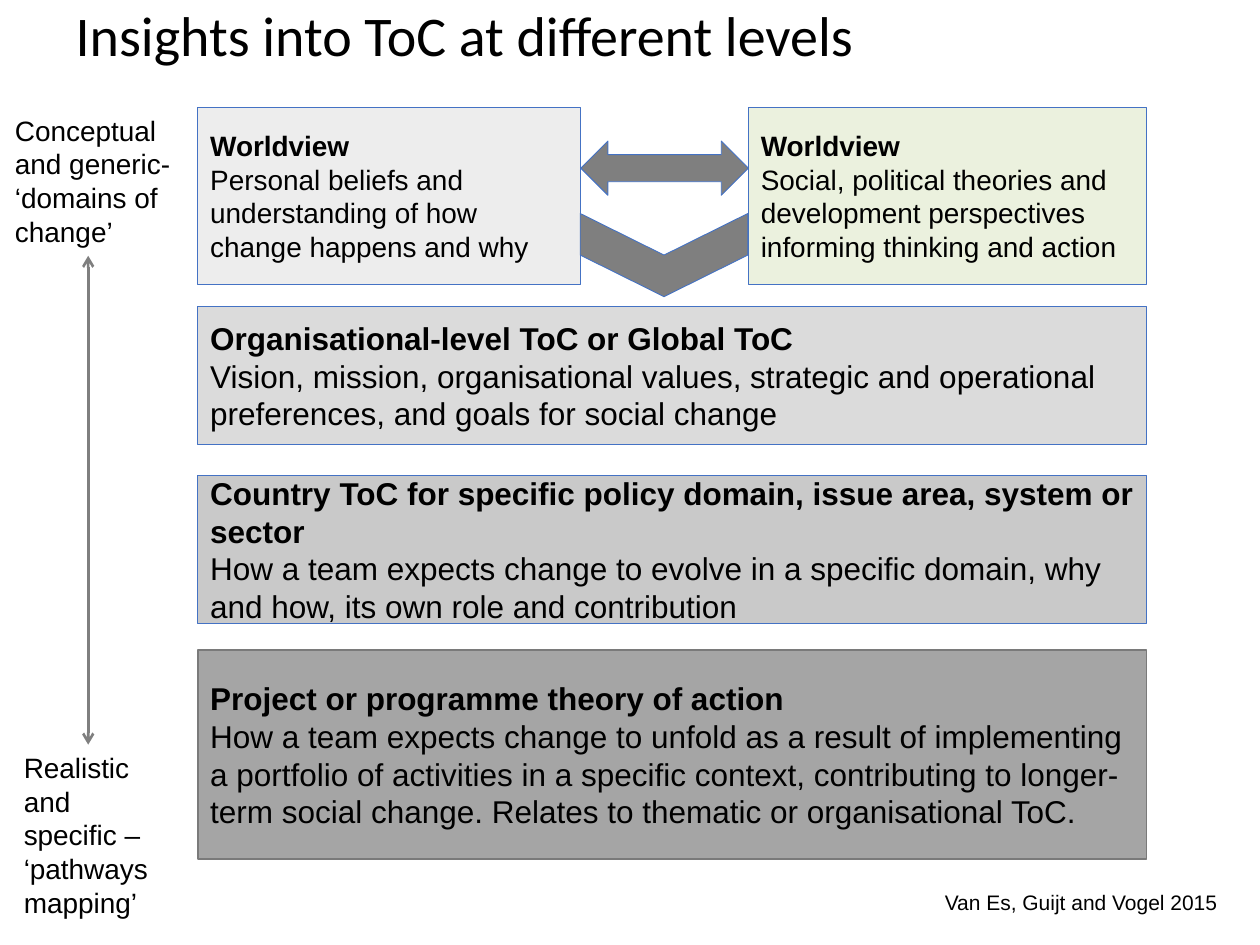
from dataclasses import dataclass

from lxml import etree
from pptx import Presentation
from pptx.dml.color import RGBColor
from pptx.enum.shapes import MSO_CONNECTOR, MSO_SHAPE
from pptx.enum.text import MSO_ANCHOR, MSO_AUTO_SIZE, PP_ALIGN
from pptx.oxml.ns import qn
from pptx.util import Inches, Pt

RECT = MSO_SHAPE.RECTANGLE
DOUBLE_ARROW = MSO_SHAPE.LEFT_RIGHT_ARROW
CHEVRON = MSO_SHAPE.CHEVRON
STRAIGHT = MSO_CONNECTOR.STRAIGHT
MIDDLE = MSO_ANCHOR.MIDDLE
LEFT = PP_ALIGN.LEFT
FIT_SHAPE = MSO_AUTO_SIZE.SHAPE_TO_FIT_TEXT
NO_FIT = MSO_AUTO_SIZE.NONE

COLORS = {
    "text": "000000",
    "border": "4472C4",
    "dark_border": "7A7A7A",
    "arrow": "7F7F7F",
    "personal": "EDEDED",
    "social": "EBF1DE",
    "organisation": "DBDBDB",
    "country": "C9C9C9",
    "project": "A5A5A5",
}
COLUMN_X, COLUMN_W = 1.57, 7.53
WORLD_Y, WORLD_H = 0.85, 1.41
GAP_X, GAP_W = 4.61, 1.33  # space between the two worldviews


@dataclass
class Level:
    heading: str
    body: str
    x: float
    y: float
    w: float
    h: float
    fill: str
    size: int = 18
    border: str = "border"
    border_width: float = 0.5


LEVELS = [
    Level("Project or programme theory of action",
          "How a team expects change to unfold as a result of implementing a "
          "portfolio of activities in a specific context, contributing to "
          "longer-term social change. Relates to thematic or organisational ToC.",
          COLUMN_X, 5.16, COLUMN_W, 1.66, "project",
          border="dark_border", border_width=1),
    Level("Country ToC for specific policy domain, issue area, system or sector",
          "How a team expects change to evolve in a specific domain, why and "
          "how, its own role and contribution",
          COLUMN_X, 3.77, COLUMN_W, 1.18, "country"),
    Level("Organisational-level ToC or Global ToC",
          "Vision, mission, organisational values, strategic and operational "
          "preferences, and goals for social change",
          COLUMN_X, 2.43, COLUMN_W, 1.1, "organisation"),
    Level("Worldview",
          "Personal beliefs and understanding of how change happens and why",
          COLUMN_X, WORLD_Y, GAP_X - COLUMN_X, WORLD_H, "personal", size=16),
    Level("Worldview",
          "Social, political theories and development perspectives informing "
          "thinking and action",
          GAP_X + GAP_W, WORLD_Y, COLUMN_X + COLUMN_W - GAP_X - GAP_W, WORLD_H,
          "social", size=16),
]


def rgb(name: str) -> RGBColor:
    return RGBColor.from_string(COLORS[name])


def write(tf, *lines: str, size: float, font: str = "Arial",
          bold_first: bool = False, spacing: float = 1.0) -> None:
    """Put each line in its own left-aligned paragraph."""
    tf.word_wrap = True
    for i, line in enumerate(lines):
        p = tf.paragraphs[0] if i == 0 else tf.add_paragraph()
        p.alignment = LEFT
        p.line_spacing = spacing
        r = p.add_run()
        r.text = line
        r.font.name = font
        r.font.size = Pt(size)
        r.font.bold = bold_first and i == 0
        r.font.color.rgb = rgb("text")


def add_block(s, kind, x: float, y: float, w: float, h: float, fill: str,
              border: str = "border", border_width: float = 0.5):
    sp = s.shapes.add_shape(kind, Inches(x), Inches(y), Inches(w), Inches(h))
    sp.shadow.inherit = False
    sp.fill.solid()
    sp.fill.fore_color.rgb = rgb(fill)
    sp.line.color.rgb = rgb(border)
    sp.line.width = Pt(border_width)
    return sp


def add_level(s, level: Level) -> None:
    sp = add_block(s, RECT, level.x, level.y, level.w, level.h, level.fill,
                   level.border, level.border_width)
    sp.text_frame.vertical_anchor = MIDDLE
    write(sp.text_frame, level.heading, level.body, size=level.size,
          bold_first=True)


def add_label(s, x: float, y: float, w: float, h: float, *lines: str,
              size: float = 16):
    sp = s.shapes.add_textbox(Inches(x), Inches(y), Inches(w), Inches(h))
    write(sp.text_frame, *lines, size=size)
    sp.text_frame.auto_size = FIT_SHAPE
    return sp


def add_scale(s, x: float, top: float, bottom: float, end_label) -> None:
    """Draw the two-headed line that ends on top of the lower label."""
    line = s.shapes.add_connector(STRAIGHT, Inches(x), Inches(top),
                                  Inches(x), Inches(bottom))
    line.end_connect(end_label, 0)
    line.line.color.rgb = rgb("arrow")
    line.line.width = Pt(1.5)
    ln = line.line._get_or_add_ln()
    for end in ("a:headEnd", "a:tailEnd"):
        etree.SubElement(ln, qn(end), type="arrow")
    etree.SubElement(line._element.spPr, qn("a:effectLst"))


def main() -> None:
    prs = Presentation()
    prs.slide_width, prs.slide_height = Inches(10), Inches(7.5)
    s = prs.slides.add_slide(prs.slide_layouts[5])

    # Title
    title = s.shapes.title
    title.left, title.top = Inches(0.5), Inches(0.03)
    title.width, title.height = Inches(9), Inches(0.55)
    title.text_frame.vertical_anchor = MIDDLE
    title.text_frame.auto_size = NO_FIT
    write(title.text_frame, "Insights into ToC at different levels",
          size=32, font="Calibri", spacing=0.9)

    # Levels, from the most specific to the most generic
    for level in LEVELS:
        add_level(s, level)

    # Arrows between the worldviews
    add_block(s, DOUBLE_ARROW, GAP_X, 1.12, GAP_W, 0.43, "arrow")
    chevron = add_block(s, CHEVRON, 4.94, 1.36, 0.66, GAP_W, "arrow")
    chevron.rotation = 90

    # Source and scale on the left
    add_label(s, 7.4, 7.01, 2.38, 0.3, "Van Es, Guijt and Vogel 2015", size=12)
    add_label(s, 0.02, WORLD_Y, 1.48, 1.18,
              "Conceptual and generic-", "‘domains of change’")
    specific = add_label(s, 0.09, 5.91, 1.22, 1.45,
                         "Realistic and specific – ‘pathways mapping’")
    add_scale(s, 0.7, 2.03, 5.91, specific)

    prs.save("out.pptx")


if __name__ == "__main__":
    main()
